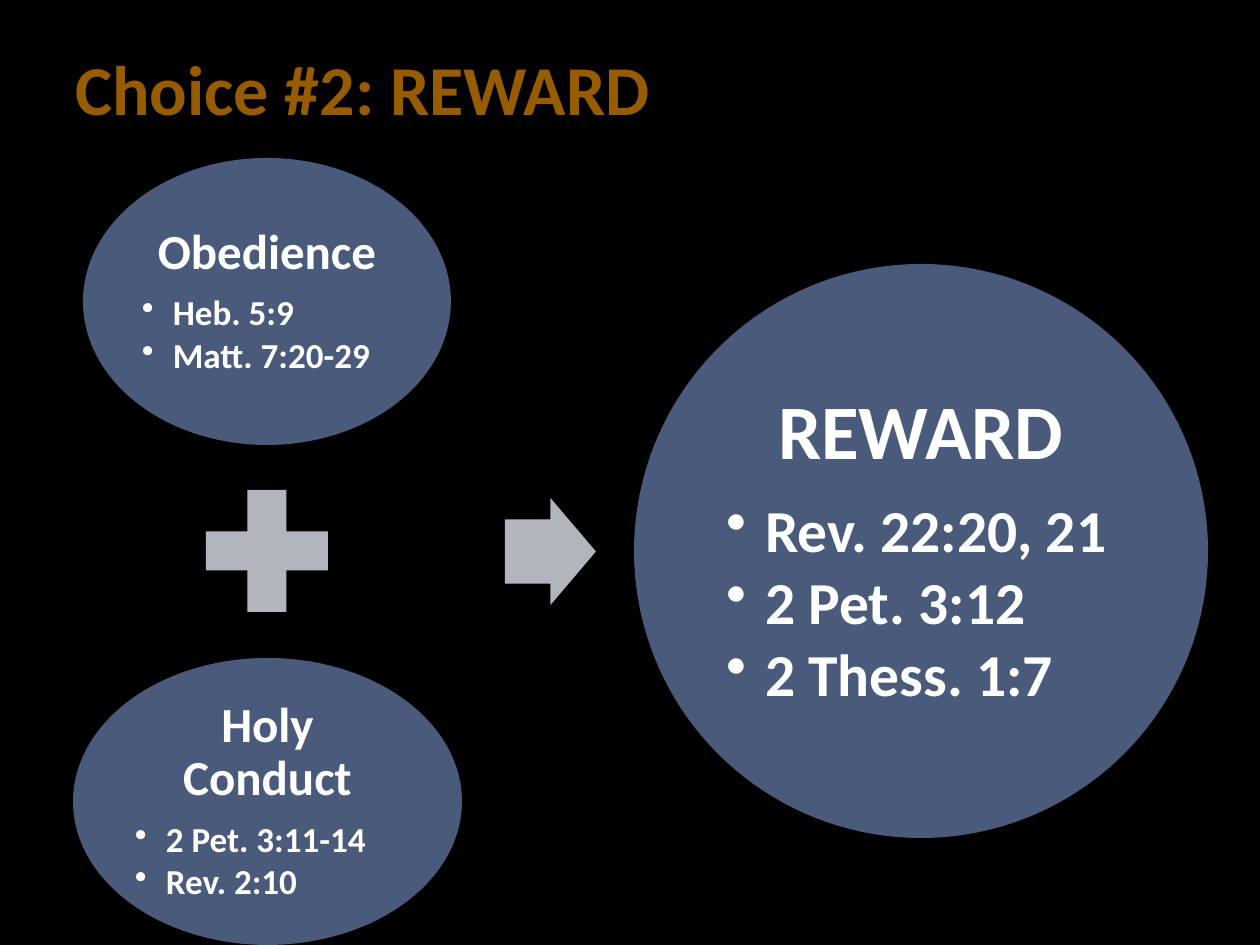
from lxml.etree import SubElement as Sub
from pptx import Presentation
from pptx.dml.color import RGBColor
from pptx.enum.shapes import MSO_SHAPE as Shape
from pptx.enum.text import MSO_ANCHOR as Anchor, PP_ALIGN as Align
from pptx.oxml.ns import qn
from pptx.util import Pt

PX = 914400 / 126  # EMU in one px
WIDE, HIGH = 1260, 945


def emu(*px):
    return [round(n * PX) for n in px]


def color(code):
    return RGBColor.from_string(code)


class Deck:
    font = "Calibri"
    back, white, gold = "000000", "FFFFFF", "975C00"
    blue, gray = "4A5A7A", "B2B5BE"

    def __init__(self):
        self.prs = Presentation()
        self.prs.slide_width, self.prs.slide_height = emu(WIDE, HIGH)
        self.slide = self.prs.slides.add_slide(self.prs.slide_layouts[6])
        fill = self.slide.background.fill
        fill.solid()
        fill.fore_color.rgb = color(self.back)

    def style(self, para, size, tint):
        font = para.font
        font.name, font.size, font.bold = self.font, Pt(size), True
        font.color.rgb = color(tint)

    def title(self, text, *box):
        frame = self.slide.shapes.add_textbox(*emu(*box)).text_frame
        frame.word_wrap = True
        frame.vertical_anchor = Anchor.BOTTOM
        para = frame.paragraphs[0]
        para.text = text
        self.style(para, 40, self.gold)

    def shape(self, kind, tint, *box):
        item = self.slide.shapes.add_shape(kind, *emu(*box))
        item.shadow.inherit = False
        item.fill.solid()
        item.fill.fore_color.rgb = color(tint)
        item.line.fill.background()
        return item

    def bullet(self, para, indent):
        props = para._p.get_or_add_pPr()
        step, = emu(indent)
        props.set("marL", str(step))
        props.set("indent", str(-step))
        Sub(props, qn("a:buChar")).set("char", "•")

    def circle(self, box, head, verses, sizes, inset, indent):
        """Draw an ellipse with a centred heading over bulleted verses."""
        frame = self.shape(Shape.OVAL, self.blue, *box).text_frame
        frame.word_wrap = True
        frame.vertical_anchor = Anchor.MIDDLE
        pad, = emu(inset)
        frame.margin_left = frame.margin_right = pad
        frame.margin_top = frame.margin_bottom = pad
        for i, text in enumerate([head, *verses]):
            para = frame.add_paragraph() if i else frame.paragraphs[0]
            size = sizes[1] if i else sizes[0]
            para.text = text
            para.alignment = Align.LEFT if i else Align.CENTER
            para.line_spacing = 0.9
            para.space_after = Pt(round(size * (0.13 if i else 0.32), 1))
            if i:
                self.bullet(para, indent)
            self.style(para, size, self.white)


def main():
    deck = Deck()
    deck.title("Choice #2: REWARD", 63, 38, 1134, 98)

    mid, axis = 267, 551  # centre of the left column, centre line
    tall, plus, gap = 287, 166, 23
    small = dict(sizes=(28, 20), inset=5, indent=31)
    top = axis - plus // 2 - gap - tall
    low = axis + plus // 2 + gap + 1
    deck.circle((mid - 184, top, 368, tall), "Obedience",
                ["Heb. 5:9", "Matt. 7:20-29"], **small)
    deck.shape(Shape.MATH_PLUS, deck.gray,
               mid - plus // 2, axis - plus // 2, plus, plus)
    deck.circle((mid - 194, low, 389, tall), "Holy Conduct",
                ["2 Pet. 3:11-14", "Rev. 2:10"], **small)

    arrow = deck.shape(Shape.RIGHT_ARROW, deck.gray, 505, axis - 53, 91, 107)
    arrow.adjustments[0] = 0.6
    arrow.adjustments[1] = 0.5

    deck.circle((634, axis - 287, 574, 574), "REWARD",
                ["Rev. 22:20, 21", "2 Pet. 3:12", "2 Thess. 1:7"],
                sizes=(44, 34), inset=8, indent=39)
    deck.prs.save("out.pptx")


if __name__ == "__main__":
    main()
